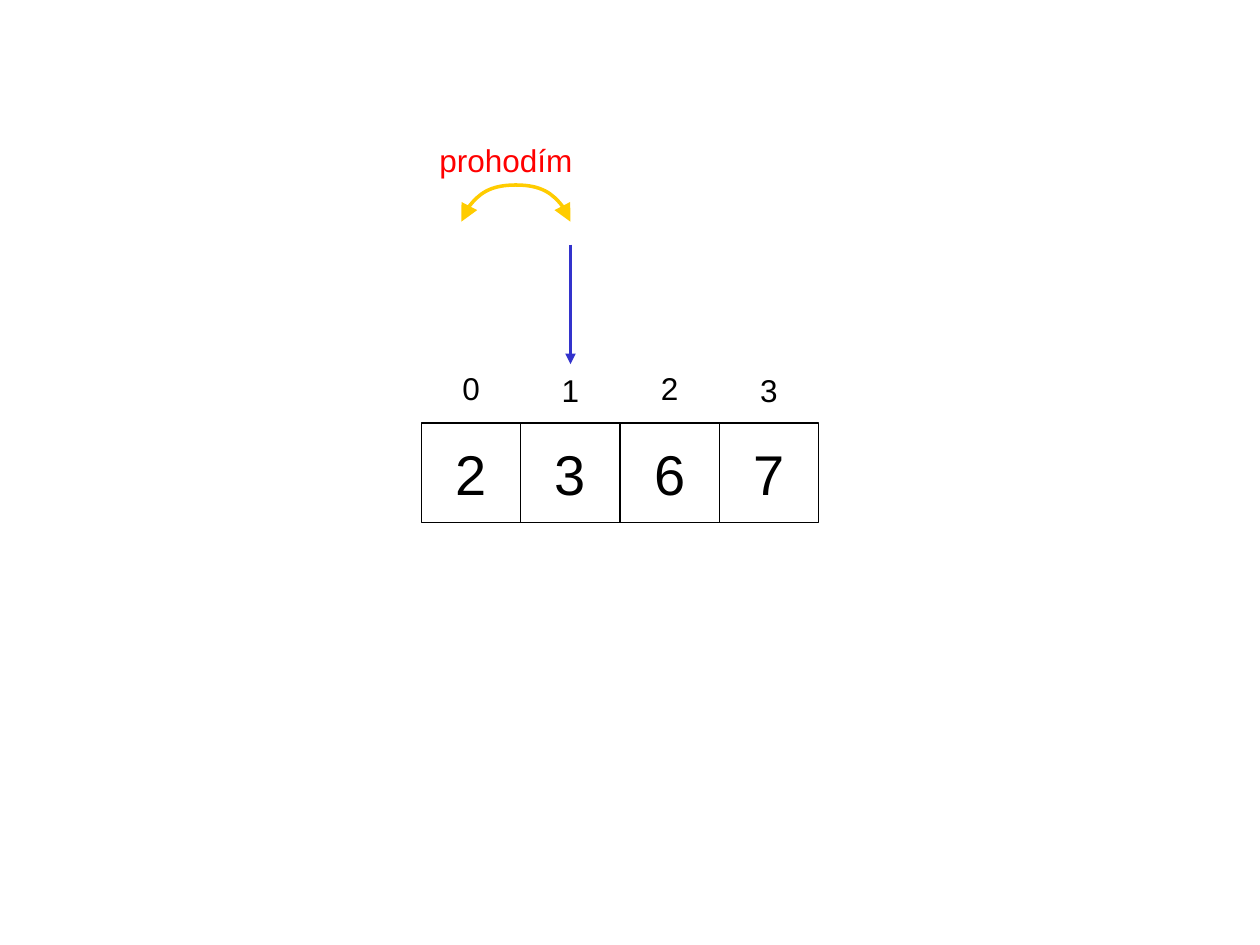
from pptx import Presentation
from pptx.dml.color import RGBColor
from pptx.enum.shapes import MSO_CONNECTOR as CONN, MSO_SHAPE as SHAPE
from pptx.enum.text import MSO_ANCHOR as ANCHOR, PP_ALIGN as ALIGN
from pptx.oxml.ns import qn
from pptx.util import Cm, Pt
from lxml.etree import SubElement

COLORS = {"ink": "000000", "swap": "FFCC00", "note": "FF0000", "pointer": "3333CC"}


class ArraySlide:
    """Draws the cells, labels and arrows of an array diagram on one slide."""

    font = {"name": "Arial"}

    def __init__(self, prs):
        self.s = prs.slides.add_slide(prs.slide_layouts[6])

    def put_text(self, sp, text, size, color="ink", **frame):
        tf = sp.text_frame
        for name, value in frame.items():
            setattr(tf, name, value)
        p = tf.paragraphs[0]
        p.alignment = ALIGN.CENTER
        r = p.add_run()
        r.text = text
        for name, value in {**self.font, "size": Pt(size)}.items():
            setattr(r.font, name, value)
        r.font.color.rgb = RGBColor.from_string(COLORS[color])

    def stroke(self, sp, color, width):
        sp.line.color.rgb = RGBColor.from_string(COLORS[color])
        sp.line.width = Pt(width)

    def arrowheads(self, sp, ends, size):
        ln = sp._element.spPr.find(qn("a:ln"))
        for end in ends:
            SubElement(ln, qn(f"a:{end}"), type="triangle", w=size, len=size)

    def cell(self, x, y, side, text):
        sp = self.s.shapes.add_shape(SHAPE.RECTANGLE, Cm(x), Cm(y), Cm(side), Cm(side))
        sp.shadow.inherit = False
        sp.fill.background()
        self.stroke(sp, "ink", 0.75)
        self.put_text(sp, text, 32, word_wrap=False, vertical_anchor=ANCHOR.MIDDLE)

    def label(self, x, y, w, h, text, color="ink"):
        sp = self.s.shapes.add_textbox(Cm(x), Cm(y), Cm(w), Cm(h))
        self.put_text(sp, text, 18, color, word_wrap=True)

    def arc(self, points, center, color):
        start, *controls = [(Cm(x), Cm(y)) for x, y in points + [center]]
        builder = self.s.shapes.build_freeform(*start)
        builder.add_line_segments(controls, close=False)
        sp = builder.convert_to_shape()
        sp.shadow.inherit = False
        sp.fill.background()
        self.stroke(sp, color, 2)
        outline = next(sp._element.iter(qn("a:path")))
        steps = outline.findall(qn("a:lnTo"))
        for i in range(0, len(steps) - 1, 3):
            curve = SubElement(outline, qn("a:cubicBezTo"))
            for step in steps[i:i + 3]:
                curve.append(step[0])
        for step in steps:
            outline.remove(step)
        self.arrowheads(sp, ["headEnd", "tailEnd"], "lg")

    def arrow(self, x, top, bottom, color):
        sp = self.s.shapes.add_connector(CONN.STRAIGHT, Cm(x), Cm(top), Cm(x), Cm(bottom))
        self.stroke(sp, color, 2)
        self.arrowheads(sp, ["tailEnd"], "med")
        SubElement(sp._element.spPr, qn("a:effectLst"))


def main():
    prs = Presentation()
    prs.slide_width, prs.slide_height = Cm(25.4), Cm(19.05)
    slide = ArraySlide(prs)
    left, side = 8.5, 2
    values = ["2", "3", "6", "7"]
    for i, value in enumerate(values):
        slide.cell(left + i * side, 8.53, side, value)
    for i in range(len(values)):
        slide.label(left + i * side, 7.32 + 0.03 * (i % 2), side, 1, str(i))
    swap = [(9.3, 4.47), (9.42, 4.04), (9.88, 3.73), (10.4, 3.73),
            (10.92, 3.73), (11.38, 4.04), (11.5, 4.47)]
    slide.arc(swap, (10.4, 4.72), "swap")
    slide.label(left, 2.72, 3.4, 1.02, "prohodím", "note")
    slide.arrow(left + 1.5 * side, 4.93, 7.34, "pointer")
    prs.save("out.pptx")


if __name__ == "__main__":
    main()
